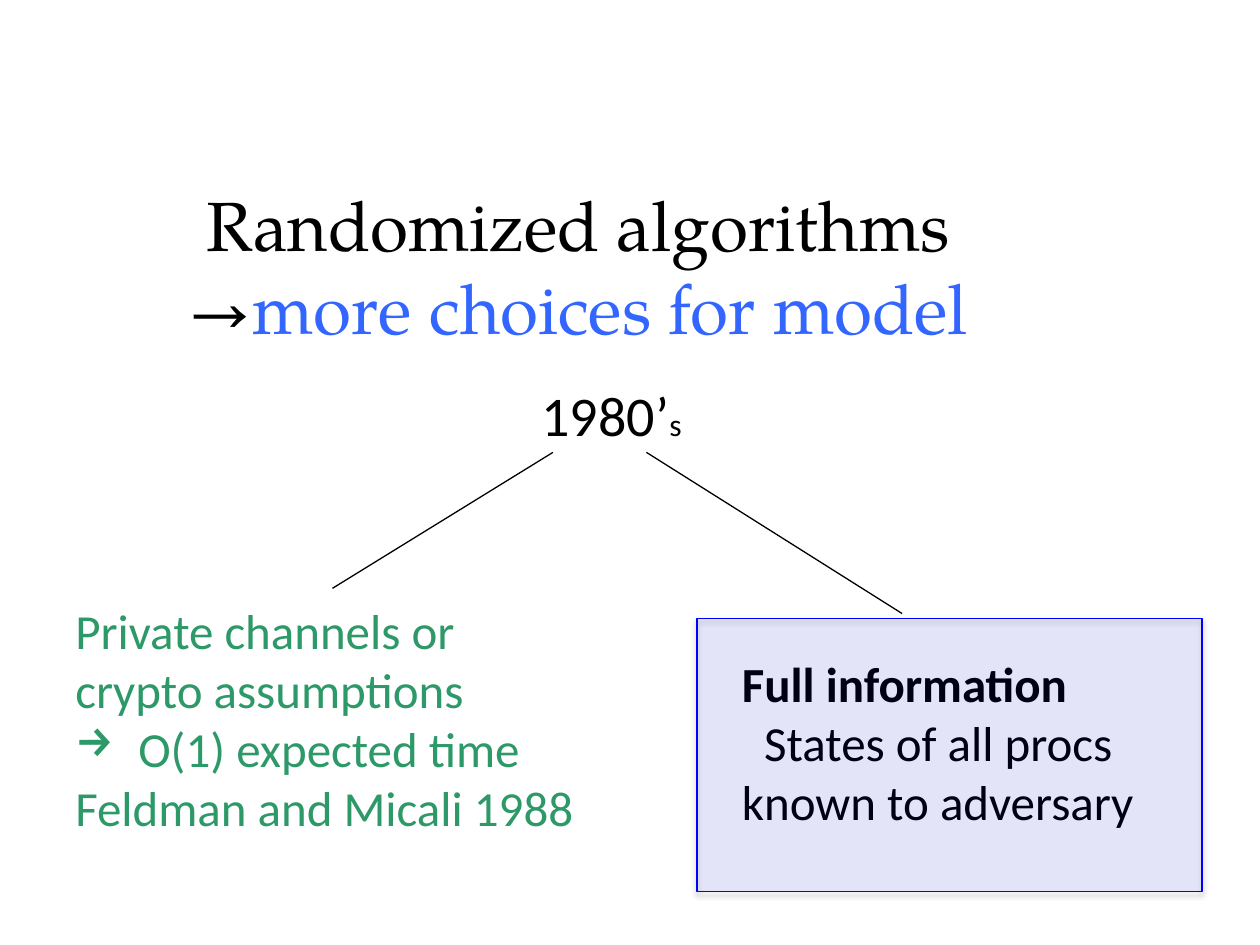
"""Build the slide on model choices for randomized algorithms."""
from dataclasses import dataclass, field

from lxml.etree import SubElement
from pptx import Presentation
from pptx.dml.color import RGBColor
from pptx.enum.shapes import MSO_CONNECTOR, MSO_SHAPE
from pptx.enum.text import MSO_ANCHOR, MSO_AUTO_SIZE, PP_ALIGN
from pptx.oxml.ns import qn
from pptx.util import Pt

COLORS = {"ink": "000000", "title": "3366FF", "private": "2D9968", "box": "0000FF"}
HEADING_FONT, BODY_FONT = "TeX Gyre Pagella", "Calibri"


@dataclass
class Line:
    text: str
    bold: bool = False
    margin: float = 0
    indent: float = 0
    bullet: str = ""


@dataclass
class Block:
    left: float
    top: float
    width: float
    height: float
    color: str
    wrap: bool
    lines: list[Line] = field(default_factory=list)


@dataclass
class Branch:
    start: tuple[float, float]
    end: tuple[float, float]


BLOCKS = [
    Block(36, 339.8, 309.6, 177.1, "private", False, [
        Line("Private channels or"),
        Line("crypto assumptions"),
        Line("O(1) expected time", margin=36, indent=-36, bullet="→"),
        Line("Feldman and Micali 1988"),
    ]),
    Block(416.9, 370, 253.4, 211, "ink", True, [
        Line("Full information", bold=True),
        Line("States of all procs known to adversary", indent=12.7),
    ]),
]
BRANCHES = [
    Branch((316, 258.5), (190, 336.2)),
    Branch((369.4, 258.5), (515.5, 350.6)),
]


def rgb(name: str) -> RGBColor:
    """Return the named colour."""
    return RGBColor.from_string(COLORS[name])


def add_frame(page, left: float, top: float, width: float, height: float, wrap: bool):
    """Add a text box and return its text frame."""
    box = page.shapes.add_textbox(Pt(left), Pt(top), Pt(width), Pt(height))
    frame = box.text_frame
    frame.word_wrap = wrap
    frame.auto_size = MSO_AUTO_SIZE.NONE if wrap else MSO_AUTO_SIZE.SHAPE_TO_FIT_TEXT
    return frame


def style(font, name: str, size: float, color: str) -> None:
    """Set the face, size and colour of a font."""
    font.name, font.size = name, Pt(size)
    font.color.rgb = rgb(color)


def add_span(para, text: str, name: str, size: float, color: str) -> None:
    """Append a styled run to a paragraph."""
    span = para.add_run()
    span.text = text
    style(span.font, name, size, color)


def add_title(page) -> None:
    """Add the two-line title."""
    frame = add_frame(page, 11.5, 106.6, 648, 90, True)
    frame.vertical_anchor = MSO_ANCHOR.MIDDLE
    para = frame.paragraphs[0]
    para.alignment = PP_ALIGN.CENTER
    add_span(para, "Randomized algorithms ", HEADING_FONT, 39.6, "ink")
    para.add_line_break()
    add_span(para, "→", HEADING_FONT, 39.6, "ink")
    add_span(para, "more choices for model ", HEADING_FONT, 39.6, "title")


def add_decade(page) -> None:
    """Add the label at the root of the branches."""
    para = add_frame(page, 302.4, 213.8, 95, 46, False).paragraphs[0]
    add_span(para, "1980’", BODY_FONT, 32, "ink")
    add_span(para, "s", BODY_FONT, 18, "ink")


def add_block(page, block: Block) -> None:
    """Add a body text block with one paragraph per line."""
    frame = add_frame(page, block.left, block.top, block.width, block.height, block.wrap)
    for index, line in enumerate(block.lines):
        para = frame.add_paragraph() if index else frame.paragraphs[0]
        para.text = line.text
        style(para.font, BODY_FONT, 28, block.color)
        para.font.bold = line.bold
        props = para._p.get_or_add_pPr()
        props.set("marL", str(Pt(line.margin)))
        props.set("indent", str(Pt(line.indent)))
        if line.bullet:
            bullet = props.makeelement(qn("a:buChar"), {"char": line.bullet})
            props.insert(0, bullet)


def add_branch(page, branch: Branch) -> None:
    """Add a thin straight line."""
    ends = [Pt(value) for value in (*branch.start, *branch.end)]
    connector = page.shapes.add_connector(MSO_CONNECTOR.STRAIGHT, *ends)
    connector.line.color.rgb = rgb("ink")
    connector.line.width = Pt(0.75)
    SubElement(connector._element.spPr, qn("a:effectLst"))


def add_highlight(page) -> None:
    """Add the translucent box with a soft shadow over the full information model."""
    box = page.shapes.add_shape(MSO_SHAPE.RECTANGLE, Pt(398.2), Pt(353.5), Pt(288.7), Pt(156))
    box.fill.solid()
    box.fill.fore_color.rgb = rgb("box")
    fill = box._element.spPr.find(qn("a:solidFill"))
    SubElement(fill[0], qn("a:alpha"), val="8000")
    box.line.color.rgb = rgb("box")
    box.line.width = Pt(0.75)
    box.shadow.inherit = False
    effects = box._element.spPr.find(qn("a:effectLst"))
    shadow = SubElement(effects, qn("a:outerShdw"), blurRad=str(Pt(3.1)), dist=str(Pt(1.8)),
                        dir="5400000", rotWithShape="0")
    shade = SubElement(shadow, qn("a:srgbClr"), val=COLORS["ink"])
    SubElement(shade, qn("a:alpha"), val="35000")


def main() -> None:
    """Build and save the deck."""
    deck = Presentation()
    deck.slide_width, deck.slide_height = Pt(720), Pt(540)
    page = deck.slides.add_slide(deck.slide_layouts[6])
    add_title(page)
    for branch in BRANCHES:
        add_branch(page, branch)
    for block in BLOCKS:
        add_block(page, block)
    add_decade(page)
    add_highlight(page)
    deck.save("out.pptx")


if __name__ == "__main__":
    main()
